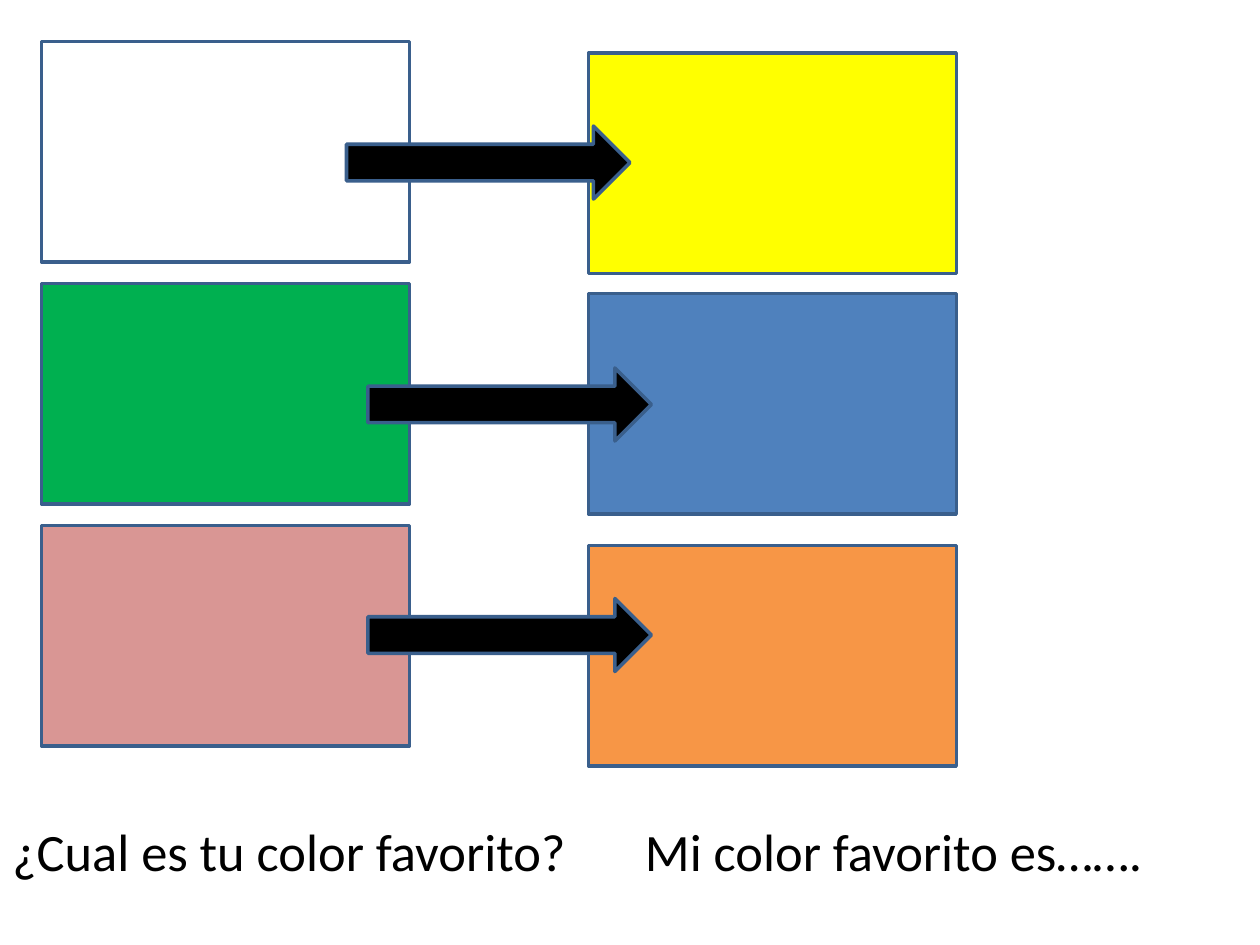
from lxml import etree
from pptx import Presentation
from pptx.dml.color import RGBColor
from pptx.enum import shapes, text
from pptx.oxml import ns
from pptx.util import Inches, Pt

COLOURS = {
    "white": "FFFFFF", "green": "00B050", "pink": "D99694",
    "yellow": "FFFF00", "blue": "4F81BD", "orange": "F79646",
    "black": "000000", "outline": "3A5F8C",
}
CARD_WIDTH, CARD_HEIGHT = 2.92, 1.75
ARROW_WIDTH, ARROW_HEIGHT = 2.25, 0.58
LEFT_CARDS, RIGHT_CARDS = 0.33, 4.67

# left colour, left top, right colour, right top, arrow left, arrow top
PAIRS = [
    ("white", 0.33, "yellow", 0.42, 2.75, 1),
    ("green", 2.25, "blue", 2.33, 2.92, 2.92),
    ("pink", 4.17, "orange", 4.33, 2.92, 4.75),
]


def colour(name):
    return RGBColor.from_string(COLOURS[name])


def add_outlined(page, kind, box, fill):
    shape = page.shapes.add_shape(kind, *map(Inches, box))
    shape.shadow.inherit = False
    shape.fill.solid()
    shape.fill.fore_color.rgb = colour(fill)
    shape.line.color.rgb = colour("outline")
    shape.line.width = Pt(2)


def add_cards(page):
    for left_fill, left_top, right_fill, right_top, *_ in PAIRS:
        for left, top, fill in ((LEFT_CARDS, left_top, left_fill),
                                (RIGHT_CARDS, right_top, right_fill)):
            add_outlined(page, shapes.MSO_SHAPE.RECTANGLE,
                         (left, top, CARD_WIDTH, CARD_HEIGHT), fill)


def add_arrows(page):
    for *_, left, top in PAIRS:
        add_outlined(page, shapes.MSO_SHAPE.RIGHT_ARROW,
                     (left, top, ARROW_WIDTH, ARROW_HEIGHT), "black")


def add_dialogue(page, box, question, answer, answer_offset):
    """Set question and answer on one line, the answer at a tab stop."""
    frame = page.shapes.add_textbox(*map(Inches, box)).text_frame
    frame.word_wrap = True
    frame.auto_size = text.MSO_AUTO_SIZE.SHAPE_TO_FIT_TEXT
    para = frame.paragraphs[0]
    tabs = etree.SubElement(para._p.get_or_add_pPr(), ns.qn("a:tabLst"))
    etree.SubElement(tabs, ns.qn("a:tab"),
                     pos=str(Inches(answer_offset)), algn="l")
    span = para.add_run()
    span.text = f"{question}\t{answer}"
    for name, value in {"name": "Calibri", "size": Pt(30)}.items():
        setattr(span.font, name, value)
    span.font.color.rgb = colour("black")


def main():
    deck = Presentation()
    deck.slide_width, deck.slide_height = Inches(10), Inches(7.5)
    page = deck.slides.add_slide(deck.slide_layouts[6])
    add_cards(page)
    add_arrows(page)
    add_dialogue(page, (0, 6.45, 9.42, 0.61), "¿Cual es tu color favorito?",
                 "Mi color favorito es…….", 5.02)
    deck.save("out.pptx")


if __name__ == "__main__":
    main()
